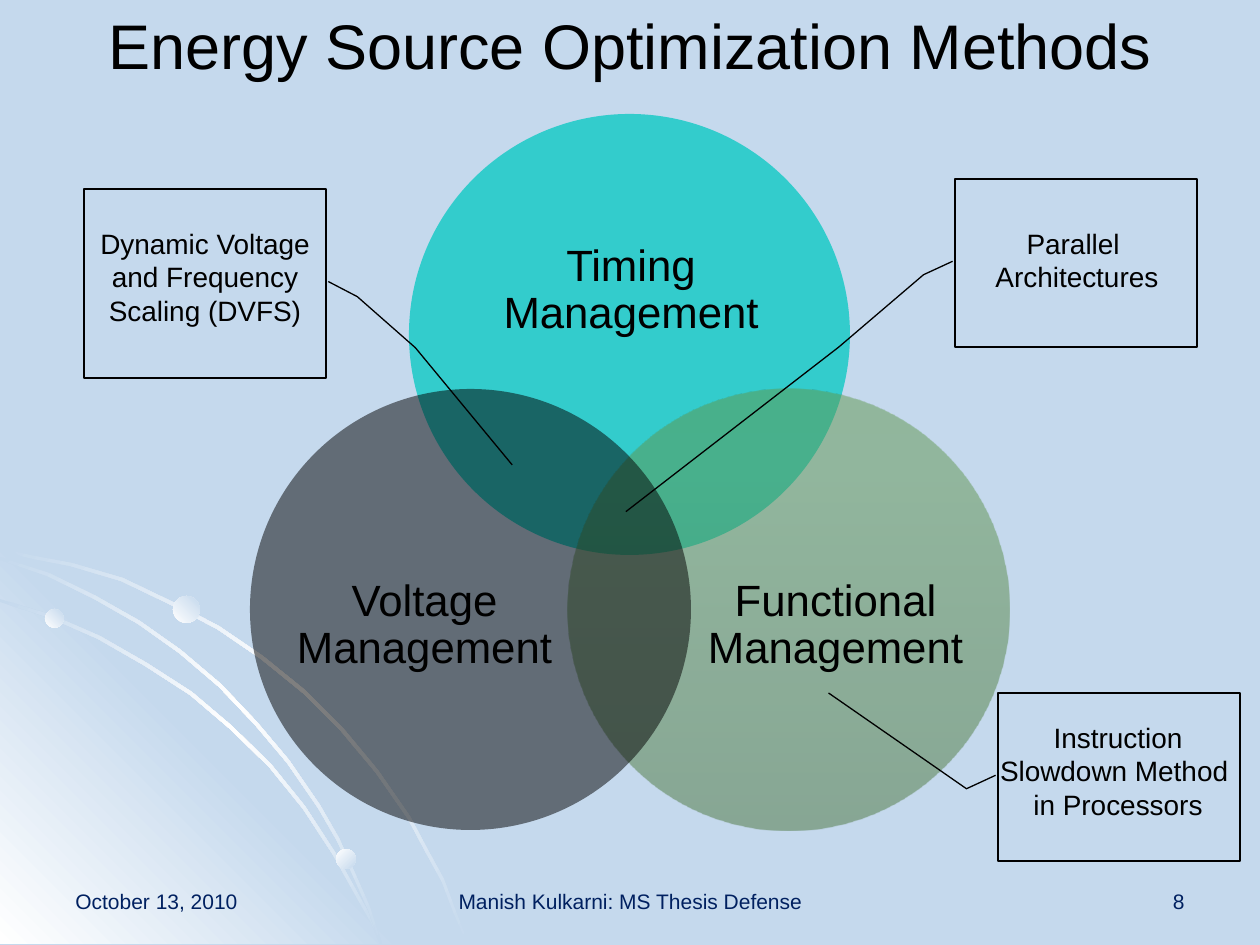
from lxml.etree import SubElement
from pptx import Presentation
from pptx.dml.color import RGBColor
from pptx.enum.shapes import MSO_SHAPE
from pptx.enum.text import MSO_ANCHOR, MSO_AUTO_SIZE, PP_ALIGN
from pptx.oxml.ns import qn
from pptx.util import Pt

PX = 914400 / 126
COLORS = {
    "sky": "C5D9ED", "white": "FFFFFF", "black": "000000", "navy": "002060",
    "teal": "33CCCC", "moss": "49733B", "leaf": "5E954D", "grass": "5E974C",
}


def paint(shape, stops, angle=0, alpha=100):
    """Fill a shape with one colour or a gradient, without line or shadow."""
    shape.shadow.inherit = False
    shape.line.fill.background()
    shape.fill.background()
    old_fill = shape._element.spPr.find(qn("a:noFill"))
    if len(stops) == 1:
        fill = old_fill.makeelement(qn("a:solidFill"))
        holders = [fill]
    else:
        fill = old_fill.makeelement(qn("a:gradFill"), rotWithShape="1")
        stop_list = SubElement(fill, qn("a:gsLst"))
        holders = [SubElement(stop_list, qn("a:gs"), pos=str(position * 1000))
                   for position, _ in stops]
        SubElement(fill, qn("a:lin"), ang=str(angle * 60000), scaled="0")
    for holder, (_, name) in zip(holders, stops):
        color = SubElement(holder, qn("a:srgbClr"), val=COLORS[name])
        if alpha < 100:
            SubElement(color, qn("a:alpha"), val=str(alpha * 1000))
    old_fill.getparent().replace(old_fill, fill)


def write(box, text, size, color="black", align=PP_ALIGN.CENTER, spacing=None, **frame_format):
    """Write one paragraph per line of text into a box."""
    frame = box.text_frame
    frame_format = {"word_wrap": True, "auto_size": MSO_AUTO_SIZE.NONE,
                    "vertical_anchor": MSO_ANCHOR.TOP, **frame_format}
    for name, value in frame_format.items():
        setattr(frame, name, value)
    for index, line in enumerate(text.split("\n")):
        para = frame.add_paragraph() if index else frame.paragraphs[0]
        para.alignment = align
        para.line_spacing = spacing
        span = para.add_run()
        span.text = line
        for name, value in {"name": "Arial", "size": Pt(size)}.items():
            setattr(span.font, name, value)
        span.font.color.rgb = RGBColor.from_string(COLORS[color])


# Page and background
deck = Presentation()
deck.slide_width, deck.slide_height = round(1260 * PX), round(945 * PX)
page = deck.slides.add_slide(deck.slide_layouts[5])
page.background.fill.solid()
page.background.fill.fore_color.rgb = RGBColor.from_string(COLORS["sky"])
shapes = page.shapes

# Corner triangle and curved ribbons, each ribbon given by its upper edge
outer_edge = [(0, 548), (35, 556), (72, 563), (123, 578), (171, 601), (219, 626), (263, 656),
              (305, 690), (343, 728), (378, 770), (410, 816), (427, 848), (444, 879),
              (456, 911), (469, 944)]
inner_edge = [(0, 599), (52, 615), (100, 636), (147, 663), (192, 692), (232, 726), (271, 764),
              (305, 806), (335, 852), (360, 897), (373, 920), (382, 944)]
middle_edge = [(0, 557), (49, 573), (96, 596), (140, 621), (181, 650), (221, 684), (257, 722),
               (289, 760), (320, 805), (339, 838), (355, 873), (370, 907), (382, 944)]
ribbon_stops = [(0, "sky"), (50, "white"), (100, "sky")]
corner_stops = [(0, "white"), (50, "sky"), (100, "white")]
outlines = [(edge, [(max(x - 2, 0), min(y + 3, 944)) for x, y in reversed(edge)],
             ribbon_stops, 45) for edge in (outer_edge, inner_edge, middle_edge)]
outlines.insert(1, ([(406, 944), (0, 944)], [(0, 538)], corner_stops, 315))
for edge, way_back, stops, angle in outlines:
    points = edge + way_back
    builder = shapes.build_freeform(*points[0], scale=PX)
    builder.add_line_segments(points[1:], close=True)
    paint(builder.convert_to_shape(), stops, angle)

# Dots on the ribbons
for left, top, size, angle in [(45, 609, 19, 315), (336, 849, 20, 45), (173, 596, 27, 315)]:
    dot = shapes.add_shape(MSO_SHAPE.OVAL, *[round(v * PX) for v in (left, top, size, size)])
    paint(dot, [(0, "white"), (100, "sky")], angle)

# Title
title = shapes.title
for name, value in {"left": 63, "top": 0, "width": 1134, "height": 158}.items():
    setattr(title, name, round(value * PX))
write(title, "Energy Source Optimization Methods", 36)

# Footer
for left, width, align, text in [
    (63, 294, PP_ALIGN.LEFT, "October 13, 2010"),
    (431, 399, PP_ALIGN.CENTER, "Manish Kulkarni: MS Thesis Defense"),
    (903, 294, PP_ALIGN.RIGHT, "8"),
]:
    box = shapes.add_textbox(*[round(v * PX) for v in (left, 882, width, 63)])
    write(box, text, 12, "navy", align)

# Venn circles with their labels
green_stops = [(0, "moss"), (80, "leaf"), (100, "grass")]
no_margins = {f"margin_{side}": 0 for side in ("left", "top", "right", "bottom")}
for left, top, stops, alpha, label_place, text in [
    (409, 114, [(0, "teal")], 100, (469, 192, 324, 198), "Timing Management"),
    (568, 389, green_stops, 50, (703, 504, 265, 243), "Functional Management"),
    (250, 389, [(0, "black")], 50, (292, 504, 265, 243), "Voltage Management"),
]:
    circle = shapes.add_shape(MSO_SHAPE.OVAL, *[round(v * PX) for v in (left, top, 441, 441)])
    paint(circle, stops, 270, alpha)
    label = shapes.add_textbox(*[round(v * PX) for v in label_place])
    write(label, text, 25, spacing=0.9, vertical_anchor=MSO_ANCHOR.MIDDLE, **no_margins)

# Callouts: frame, far end of the leader line, whether mirrored, text place and text
for frame, leader, mirrored, text_place, text in [
    ((84, 189, 242, 189), (0.84, -0.37, 1.46, -0.77), True, (63, 220, 284, 115),
     "Dynamic Voltage and Frequency Scaling (DVFS)"),
    ((998, 693, 242, 168), (0.42, -0.28, 0, -0.7), False, (976, 714, 284, 115),
     "Instruction Slowdown Method \nin Processors"),
    ((955, 179, 242, 168), (1, -0.48, 1.98, -1.36), False, (935, 220, 284, 81),
     "Parallel \nArchitectures"),
]:
    callout = shapes.add_shape(MSO_SHAPE.LINE_CALLOUT_3, *[round(v * PX) for v in frame])
    callout.shadow.inherit = False
    callout.fill.background()
    callout.line.color.rgb = RGBColor.from_string(COLORS["black"])
    callout.line.width = Pt(0.75)
    for index, value in enumerate((0.49, -0.01, 0.57, -0.13, *leader)):
        callout.adjustments[index] = value
    if mirrored:
        callout._element.spPr.find(qn("a:xfrm")).set("flipH", "1")
    box = shapes.add_textbox(*[round(v * PX) for v in text_place])
    write(box, text, 16, auto_size=MSO_AUTO_SIZE.SHAPE_TO_FIT_TEXT)

deck.save("out.pptx")
